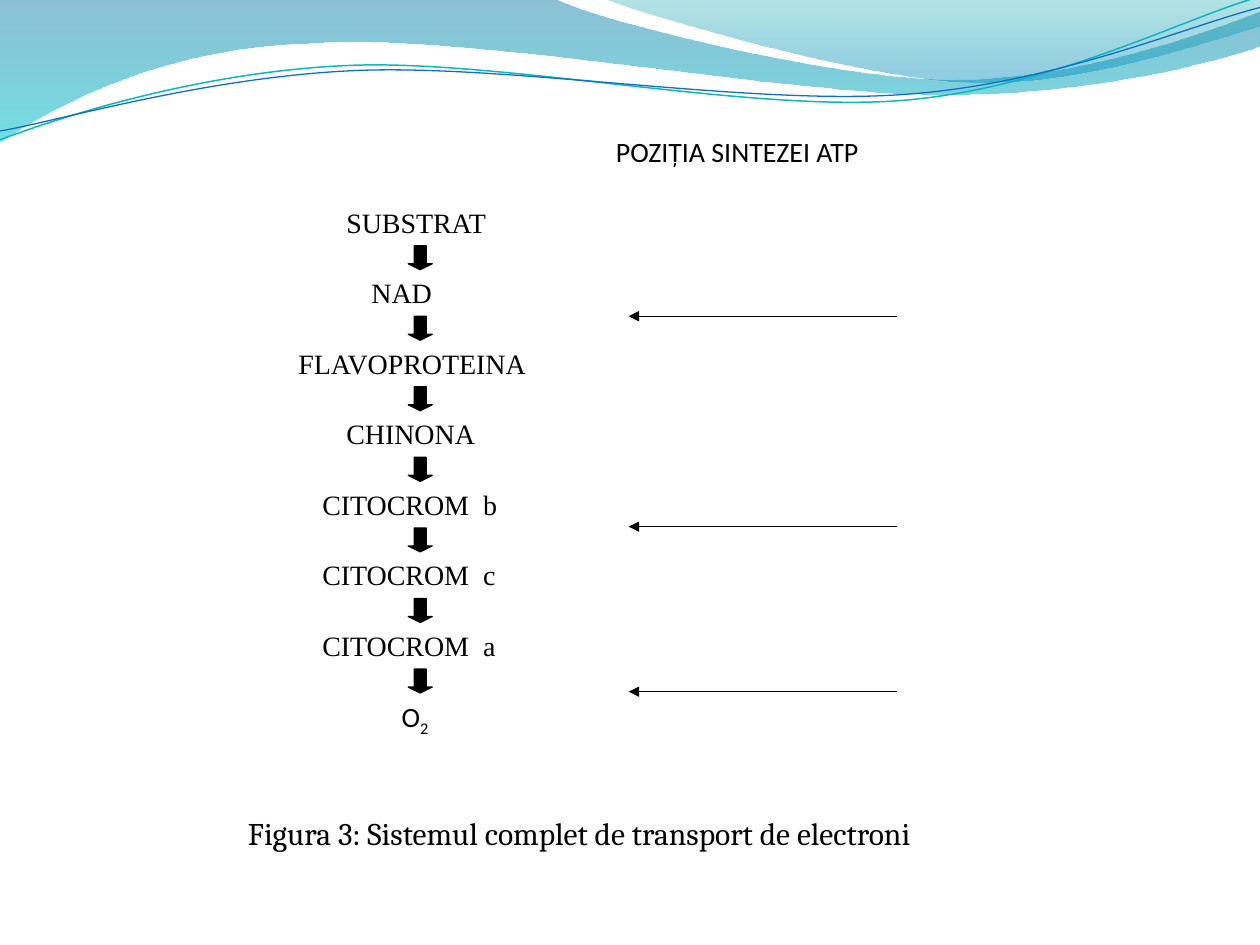
import math
import pptx
import pptx.util
import pptx.dml.color
import pptx.enum.shapes
import pptx.enum.text
import pptx.oxml.ns
import lxml.etree

Inches = pptx.util.Inches
SHAPES = pptx.enum.shapes.MSO_SHAPE

THEME = {
    "ink": "000000", "paper": "FFFFFF", "teal": "0AB8BF", "blue": "0F6FC6",
    "band": [("0074A1", 45), ("00C6CF", 55)],
    "crest": [("00A1A9", 30), ("008BBF", 45)],
    "step_font": "Times New Roman", "label_font": "Calibri", "caption_font": "Cambria",
    "label_size": 16, "caption_size": 18, "hairline": 0.75, "wave": 0.85,
}

CHAIN = [
    ("SUBSTRAT", 2.65, 1.55),
    ("NAD", 2.85, 0.97),
    ("FLAVOPROTEINA", 2.27, 2.33),
    ("CHINONA", 2.65, 1.55),
    ("CITOCROM  b", 2.46, 2.14),
    ("CITOCROM  c", 2.46, 1.94),
    ("CITOCROM  a", 2.46, 2.14),
]
OXYGEN = [(" O", 0), ("2", -25)]
HEADING = "POZIȚIA SINTEZEI ATP"
CAPTION = "Figura 3: Sistemul complet de transport de electroni"
ATP_SITES = [2.51, 4.18, 5.49]
CHAIN_TOP, CHAIN_PITCH, STEP_HEIGHT = 1.58, 0.56, 0.37
ARROW_LEFT, ARROW_SIZE = 3.24, 0.19
WAVE_TILT = -2.7

BAND = [
    (0, 0), (4.4, -0.01),
    (4.76, 0.17, 6.64, 0.63, 7.58, 0.63), (8.53, 0.63, 9.58, 0.26, 10, 0.09),
    (10.01, 0.36),
    (9.83, 0.44, 8.7, 0.76, 7.46, 0.75), (6.22, 0.75, 3.82, 0.28, 2.57, 0.34),
    (1.29, 0.36, 0.46, 0.83, -0.01, 1.13),
]
CREST = [
    (4.79, -0.01),
    (5.09, 0.11, 6.82, 0.62, 7.69, 0.65), (8.56, 0.69, 9.61, 0.32, 10, 0.21),
    (10, 0),
]
TEAL_WAVE = [
    (0, 1.11), (0.48, 0.93, 1.58, 0.57, 2.77, 0.52),
    (3.95, 0.47, 5.93, 0.89, 7.13, 0.8), (8.33, 0.71, 9.38, 0.15, 9.98, -0.02),
]
BLUE_WAVE = [
    (0, 1.04), (0.47, 0.96, 1.64, 0.61, 2.83, 0.56),
    (4.03, 0.51, 5.97, 0.84, 7.17, 0.75), (8.36, 0.67, 9.41, 0.21, 10, 0.06),
]


def rgb(color):
    return pptx.dml.color.RGBColor.from_string(color)


def add_child(parent, tag, **attributes):
    return lxml.etree.SubElement(parent, pptx.oxml.ns.qn(tag), **attributes)


def turn(point, center, degrees):
    angle = math.radians(degrees)
    dx, dy = point[0] - center[0], point[1] - center[1]
    return (center[0] + dx * math.cos(angle) - dy * math.sin(angle),
            center[1] + dx * math.sin(angle) + dy * math.cos(angle))


def draw_outline(slide, segments, close, center=(5, 0.58), tilt=0):
    points = [turn(segment[i:i + 2], center, -tilt)
              for segment in segments for i in range(0, len(segment), 2)]
    start, *rest = [(Inches(x), Inches(y)) for x, y in points]
    builder = slide.shapes.build_freeform(*start, scale=1.0)
    builder.add_line_segments(rest, close=close)
    outline = builder.convert_to_shape()
    outline.shadow.inherit = False
    outline.rotation = tilt
    corners = iter(list(outline._element.iter(pptx.oxml.ns.qn("a:lnTo"))))
    for segment in segments[1:]:
        first = next(corners)
        if len(segment) == 6:
            curve = lxml.etree.Element(pptx.oxml.ns.qn("a:cubicBezTo"))
            first.addprevious(curve)
            for corner in (first, next(corners), next(corners)):
                curve.append(corner[0])
                corner.getparent().remove(corner)
    return outline


def add_band(slide, segments, stops):
    band = draw_outline(slide, segments, True)
    band.line.fill.background()
    band.fill.gradient()
    band.fill.gradient_angle = 270
    for stop, (color, _) in zip(band.fill.gradient_stops, stops):
        stop.color.rgb = rgb(color)
    colors = band._element.spPr.iter(pptx.oxml.ns.qn("a:srgbClr"))
    for node, (_, opacity) in zip(list(colors), stops):
        add_child(node, "a:alpha", val=str(opacity * 1000))


def add_wave(slide, segments, color, width):
    wave = draw_outline(slide, segments, False, tilt=WAVE_TILT)
    wave.fill.background()
    wave.line.color.rgb = rgb(color)
    wave.line.width = pptx.util.Pt(width)


def add_block(slide, preset, left, top, width, height, color):
    block = slide.shapes.add_shape(
        preset, Inches(left), Inches(top), Inches(width), Inches(height))
    block.shadow.inherit = False
    block.fill.solid()
    block.fill.fore_color.rgb = rgb(color)
    block.line.color.rgb = rgb(color)
    block.line.width = pptx.util.Pt(THEME["hairline"])
    return block


def write(holder, runs, font, size, space_after=0):
    frame = holder.text_frame
    frame.word_wrap = True
    frame.vertical_anchor = pptx.enum.text.MSO_ANCHOR.TOP
    paragraph = frame.paragraphs[0]
    paragraph.alignment = pptx.enum.text.PP_ALIGN.LEFT
    paragraph.space_after = pptx.util.Pt(space_after)
    for words, baseline in runs:
        run = paragraph.add_run()
        run.text = words
        run.font.name = font
        run.font.size = pptx.util.Pt(size)
        run.font.color.rgb = rgb(THEME["ink"])
        if baseline:
            run.font._element.set("baseline", str(baseline * 1000))


def add_label(slide, runs, left, top, width, height, font, space_after=0):
    label = add_block(slide, SHAPES.RECTANGLE, left, top, width, height, THEME["paper"])
    write(label, runs, font, THEME["label_size"], space_after)


def add_site(slide, y):
    site = slide.shapes.add_connector(
        pptx.enum.shapes.MSO_CONNECTOR.STRAIGHT,
        Inches(7.12), Inches(y), Inches(4.99), Inches(y))
    site.line.color.rgb = rgb(THEME["ink"])
    site.line.width = pptx.util.Pt(THEME["hairline"])
    add_child(site.line._get_or_add_ln(), "a:tailEnd", type="triangle")
    add_child(site._element.spPr, "a:effectLst")


def main():
    deck = pptx.Presentation()
    deck.slide_width, deck.slide_height = Inches(10), Inches(7.5)
    slide = deck.slides.add_slide(deck.slide_layouts[6])

    add_band(slide, BAND, THEME["band"])
    add_band(slide, CREST, THEME["crest"])
    add_wave(slide, TEAL_WAVE, THEME["teal"], THEME["wave"])
    add_wave(slide, BLUE_WAVE, THEME["blue"], THEME["hairline"])

    step_tops = [CHAIN_TOP + CHAIN_PITCH * i for i in range(len(CHAIN) + 1)]
    for (step, left, width), top in zip(CHAIN, step_tops):
        add_label(slide, [(step, 0)], left, top, width, STEP_HEIGHT, THEME["step_font"])
    add_label(slide, OXYGEN, 3.04, step_tops[-1], 1.36, STEP_HEIGHT,
              THEME["label_font"], 10)
    for y in ATP_SITES:
        add_site(slide, y)
    for top in step_tops[:-1]:
        arrow = add_block(slide, SHAPES.LEFT_ARROW, ARROW_LEFT, top + STEP_HEIGHT,
                          ARROW_SIZE, ARROW_SIZE, THEME["ink"])
        arrow.rotation = 270
        arrow.adjustments[0], arrow.adjustments[1] = 0.5, 0.25

    add_label(slide, [(HEADING, 0)], 4.79, 1.02, 2.66, 0.56, THEME["label_font"], 10)
    caption = slide.shapes.add_textbox(Inches(1.87), Inches(6.41), Inches(6.64), Inches(0.4))
    write(caption, [(CAPTION, 0)], THEME["caption_font"], THEME["caption_size"])
    caption.text_frame.auto_size = pptx.enum.text.MSO_AUTO_SIZE.SHAPE_TO_FIT_TEXT

    deck.save("out.pptx")


if __name__ == "__main__":
    main()
